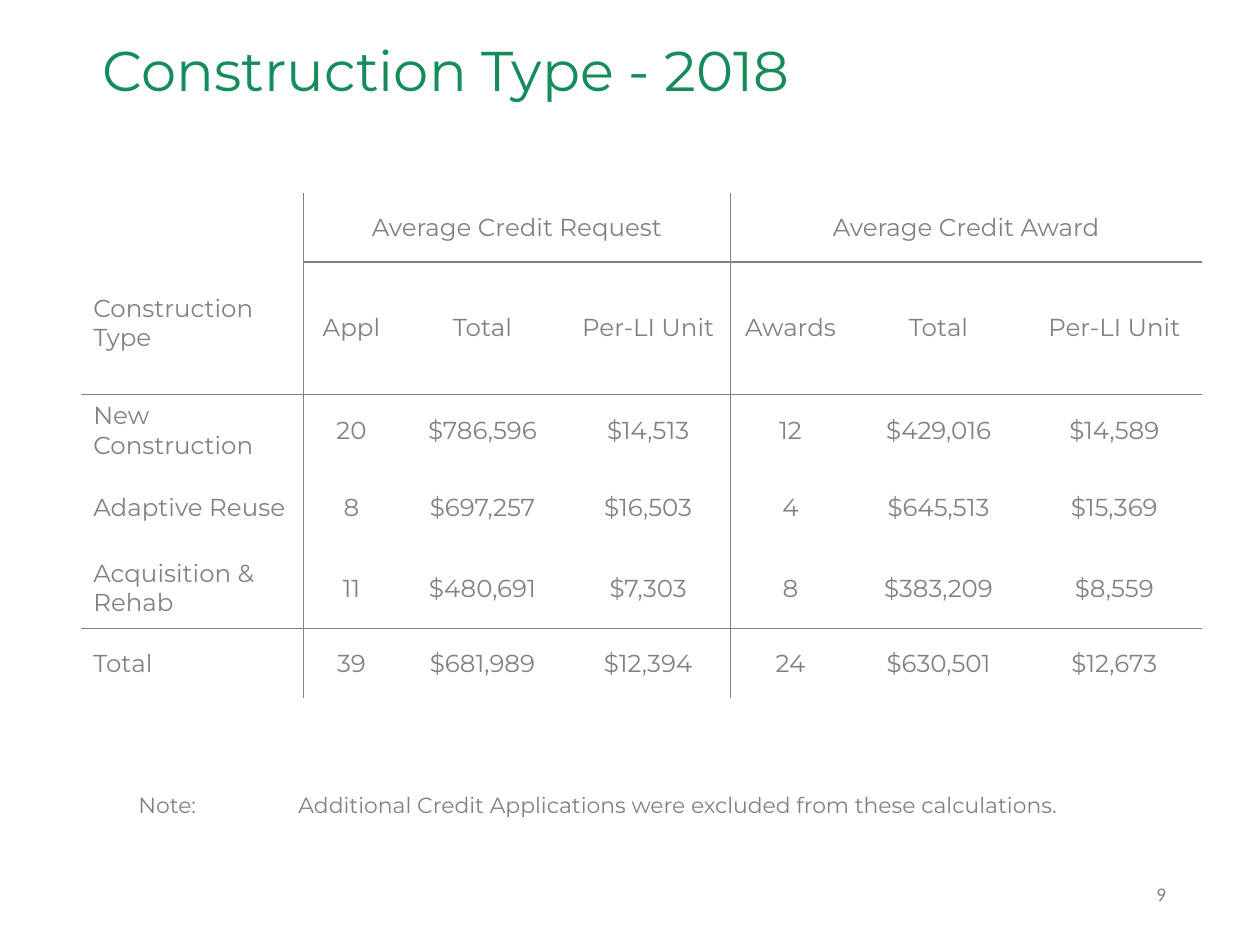
from lxml import etree
from pptx import Presentation
from pptx.dml.color import RGBColor
from pptx.enum import text
from pptx.oxml.ns import qn
from pptx.util import Inches, Pt

GREEN = RGBColor(0x15, 0x8C, 0x59)
GRAY = RGBColor(0x80, 0x81, 0x84)
FONT = "Montserrat"

COL_WIDTHS = [1.77, 0.76, 1.32, 1.31, 0.95, 1.4, 1.39]
ROW_HEIGHTS = [0.55, 1.05, 0.58, 0.64, 0.64, 0.55]
ROWS = [
    ["Construction\nType", "Average Credit Request", "", "", "Average Credit Award", "", ""],
    ["", "Appl", "Total", "Per-LI Unit", "Awards", "Total", "Per-LI Unit"],
    ["New Construction", "20", "$786,596", "$14,513", "12", "$429,016", "$14,589"],
    ["Adaptive Reuse", "8", "$697,257", "$16,503", "4", "$645,513", "$15,369"],
    ["Acquisition & Rehab", "11", "$480,691", "$7,303", "8", "$383,209", "$8,559"],
    ["Total", "39", "$681,989", "$12,394", "24", "$630,501", "$12,673"],
]
RULED_ROWS = {0, 1, 4}  # rows with a rule below
RULED_COLS = {0, 3}     # columns with a rule to the right


def add_run(p, words, size, color=GRAY, font=FONT):
    r = p.add_run()
    r.text = words
    r.font.size = Pt(size)
    r.font.name = font
    r.font.color.rgb = color


def rule_below(row, col):
    return row in RULED_ROWS and (row, col) != (0, 0)


def set_borders(cell, row, col):
    tc_pr = cell._tc.get_or_add_tcPr()
    edges = {
        "a:lnL": col - 1 in RULED_COLS,
        "a:lnR": col in RULED_COLS,
        "a:lnT": rule_below(row - 1, col),
        "a:lnB": rule_below(row, col),
    }
    for tag, ruled in edges.items():
        ln = etree.SubElement(tc_pr, qn(tag), w=str(Pt(1)))
        if ruled:
            fill = etree.SubElement(ln, qn("a:solidFill"))
            etree.SubElement(fill, qn("a:srgbClr"), val=str(GRAY))
        else:
            etree.SubElement(ln, qn("a:noFill"))


def add_title(s, words, left, top, width, height):
    sp = s.shapes.title
    sp.left, sp.top, sp.width, sp.height = left, top, width, height
    tf = sp.text_frame
    tf.word_wrap = True
    tf.vertical_anchor = text.MSO_ANCHOR.TOP
    p = tf.paragraphs[0]
    p.alignment = text.PP_ALIGN.LEFT
    p.line_spacing = 0.9
    add_run(p, words, 32, GREEN)


def add_credit_table(s, left, top, width, height):
    table = s.shapes.add_table(len(ROWS), len(COL_WIDTHS), left, top, width, height).table
    table.first_row = table.horz_banding = False
    for column, share in zip(table.columns, COL_WIDTHS):
        column.width = int(width * share / sum(COL_WIDTHS))
    for row, share in zip(table.rows, ROW_HEIGHTS):
        row.height = int(height * share / sum(ROW_HEIGHTS))

    # Cell text, rules and fill
    for i, values in enumerate(ROWS):
        for j, value in enumerate(values):
            cell = table.cell(i, j)
            set_borders(cell, i, j)
            cell.fill.background()
            cell.vertical_anchor = text.MSO_ANCHOR.MIDDLE
            tf = cell.text_frame
            for k, line in enumerate(value.split("\n") if value else []):
                p = tf.add_paragraph() if k else tf.paragraphs[0]
                p.alignment = text.PP_ALIGN.CENTER if j else text.PP_ALIGN.LEFT
                add_run(p, line, 14)

    # Header spans; the row heading sits low in its tall cell
    table.cell(0, 0).merge(table.cell(1, 0))
    table.cell(0, 0).margin_top = Inches(0.52)
    for first in (1, 4):
        table.cell(0, first).merge(table.cell(0, first + 2))


def add_text(s, words, size, font, left, top, width, height, tab=None):
    tf = s.shapes.add_textbox(left, top, width, height).text_frame
    tf.word_wrap = True
    p = tf.paragraphs[0]
    if tab is not None:
        tabs = etree.SubElement(p._p.get_or_add_pPr(), qn("a:tabLst"))
        etree.SubElement(tabs, qn("a:tab"), pos=str(tab), algn="l")
    add_run(p, words, size, font=font)


def main():
    prs = Presentation()
    prs.slide_width, prs.slide_height = Inches(10), Inches(7.5)
    s = prs.slides.add_slide(prs.slide_layouts[5])

    # Page number
    add_text(s, "9", 11, "Calibri", Inches(9.08), Inches(6.95), Inches(0.38), Inches(0.29))
    # Title
    add_title(s, "Construction Type - 2018", Inches(0.71), Inches(0.29), Inches(8.39), Inches(1.11))
    # Credit figures
    add_credit_table(s, Inches(0.64), Inches(1.53), Inches(8.9), Inches(sum(ROW_HEIGHTS)))
    # Note
    add_text(s, "Note:\tAdditional Credit Applications were excluded from these calculations.",
             12.5, FONT, Inches(1), Inches(6.23), Inches(8.32), Inches(0.31), tab=Inches(1.27))

    prs.save("out.pptx")


if __name__ == "__main__":
    main()
